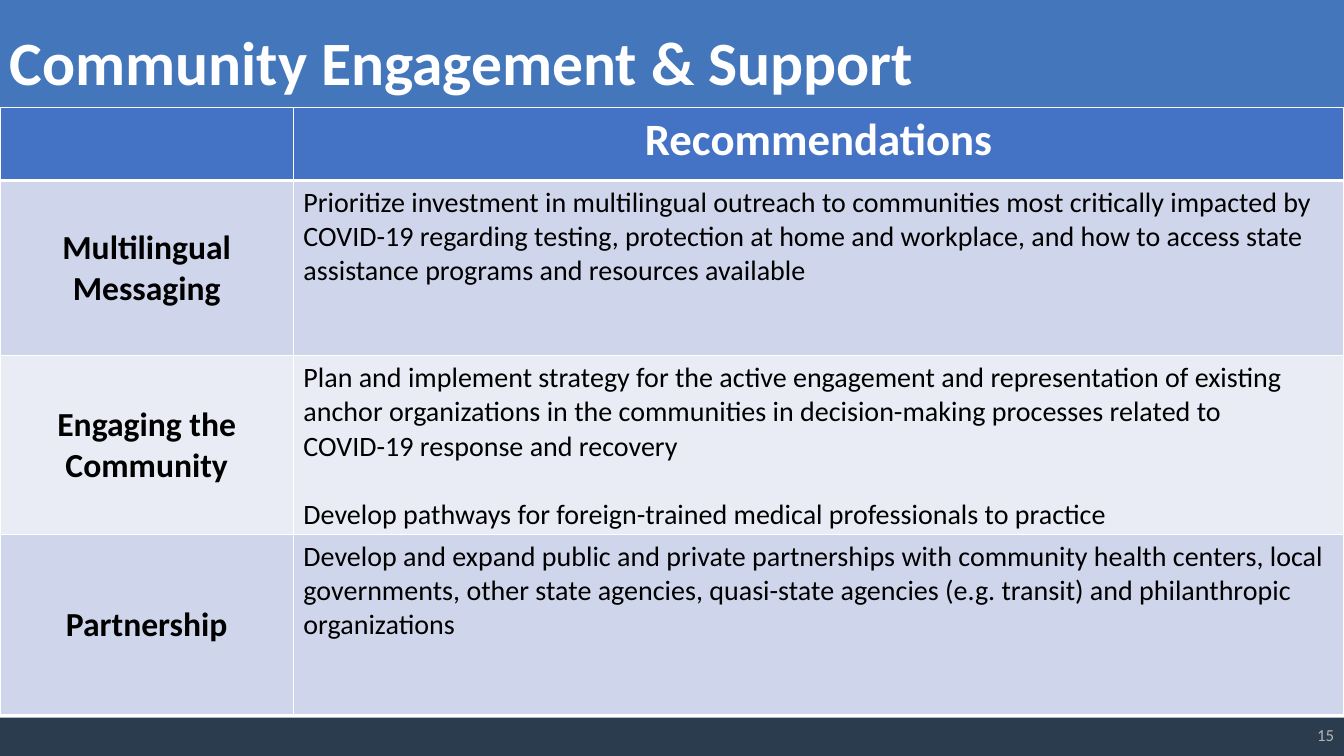
from dataclasses import dataclass

from lxml import etree
from pptx import Presentation
from pptx.dml.color import RGBColor
from pptx.enum import shapes, text
from pptx.oxml import ns
from pptx.util import Inches, Pt


@dataclass(frozen=True)
class Theme:
    font: str = "Calibri"
    banner: str = "4376BB"
    footer: str = "2A3C4E"
    header: str = "4472C4"
    bands: tuple = ("CFD5EA", "E9EBF5")
    light: str = "FFFFFF"
    dark: str = "000000"
    muted: str = "B5B5B5"
    title_size: int = 44
    header_size: int = 32
    topic_size: int = 24
    body_size: int = 20
    number_size: int = 12


THEME = Theme()
WIDTH, HEIGHT = 13.33, 7.5
COLUMN_WIDTHS = (2.91, 10.42)
ROW_HEIGHTS = (0.72, 1.74, 1.77, 1.79)
RECOMMENDATIONS = (
    ("Multilingual Messaging", (
        "Prioritize investment in multilingual outreach to communities most "
        "critically impacted by COVID-19 regarding testing, protection at home and "
        "workplace, and how to access state assistance programs and resources available",
    )),
    ("Engaging the Community", (
        "Plan and implement strategy for the active engagement and representation of "
        "existing anchor organizations in the communities in decision-making processes "
        "related to COVID-19 response and recovery",
        "Develop pathways for foreign-trained medical professionals to practice",
    )),
    ("Partnership", (
        "Develop and expand public and private partnerships with community health "
        "centers, local governments, other state agencies, quasi-state agencies "
        "(e.g. transit) and philanthropic organizations",
    )),
)


def add_bar(slide, top, height, color):
    bar = slide.shapes.add_shape(
        shapes.MSO_SHAPE.RECTANGLE, 0, Inches(top), Inches(WIDTH), Inches(height))
    bar.shadow.inherit = False
    bar.fill.solid()
    bar.fill.fore_color.rgb = RGBColor.from_string(color)
    bar.line.fill.background()


def write(frame, paragraphs, size, color, bold=False, align=text.PP_ALIGN.LEFT):
    """Fill a text frame, leaving one line's space between paragraphs."""
    frame.word_wrap = True
    for index, wording in enumerate(paragraphs):
        paragraph = frame.add_paragraph() if index else frame.paragraphs[0]
        paragraph.text = wording
        paragraph.alignment = align
        if index:
            paragraph.space_before = Pt(size * 1.22)
        font = paragraph.font
        font.name, font.size, font.bold = THEME.font, Pt(size), bold
        font.color.rgb = RGBColor.from_string(color)


def add_label(slide, left, top, width, height, wording, size, color,
              anchor=text.MSO_ANCHOR.TOP, **style):
    label = slide.shapes.add_textbox(
        Inches(left), Inches(top), Inches(width), Inches(height))
    label.text_frame.vertical_anchor = anchor
    write(label.text_frame, [wording], size, color, **style)


def style_cell(cell, color, top=1, bottom=1):
    """Set white borders, with top and bottom widths in points, and the fill."""
    properties = cell._tc.get_or_add_tcPr()
    for side, points in (("L", 1), ("R", 1), ("T", top), ("B", bottom)):
        border = etree.SubElement(properties, ns.qn(f"a:ln{side}"), w=str(Pt(points)))
        fill = etree.SubElement(border, ns.qn("a:solidFill"))
        etree.SubElement(fill, ns.qn("a:srgbClr"), val=THEME.light)
    cell.fill.solid()
    cell.fill.fore_color.rgb = RGBColor.from_string(color)


def add_recommendations(slide):
    table = slide.shapes.add_table(
        len(ROW_HEIGHTS), len(COLUMN_WIDTHS), 0, Inches(1.07),
        Inches(WIDTH), Inches(sum(ROW_HEIGHTS))).table
    for column, width in zip(table.columns, COLUMN_WIDTHS):
        column.width = Inches(width)
    for row, height in zip(table.rows, ROW_HEIGHTS):
        row.height = Inches(height)

    center = text.PP_ALIGN.CENTER
    for cell in table.rows[0].cells:
        style_cell(cell, THEME.header, bottom=3)
    write(table.cell(0, 1).text_frame, ["Recommendations"],
          THEME.header_size, THEME.light, bold=True, align=center)

    for row, (topic, actions) in enumerate(RECOMMENDATIONS, 1):
        topic_cell, action_cell = table.cell(row, 0), table.cell(row, 1)
        for cell in (topic_cell, action_cell):
            style_cell(cell, THEME.bands[(row - 1) % 2], top=3 if row == 1 else 1)
        topic_cell.vertical_anchor = text.MSO_ANCHOR.MIDDLE
        write(topic_cell.text_frame, [topic], THEME.topic_size, THEME.dark,
              bold=True, align=center)
        write(action_cell.text_frame, actions, THEME.body_size, THEME.dark)


def main():
    deck = Presentation()
    deck.slide_width, deck.slide_height = Inches(WIDTH), Inches(HEIGHT)
    slide = deck.slides.add_slide(deck.slide_layouts[6])
    add_bar(slide, 0, 1.07, THEME.banner)
    add_bar(slide, 7.12, 0.38, THEME.footer)
    add_label(slide, 0, 0.19, 12.56, 0.84, "Community Engagement & Support",
              THEME.title_size, THEME.light, bold=True)
    add_recommendations(slide)
    add_label(slide, 10.34, 7.09, 2.99, 0.4, "15", THEME.number_size, THEME.muted,
              anchor=text.MSO_ANCHOR.MIDDLE, align=text.PP_ALIGN.RIGHT)
    deck.save("out.pptx")


if __name__ == "__main__":
    main()
